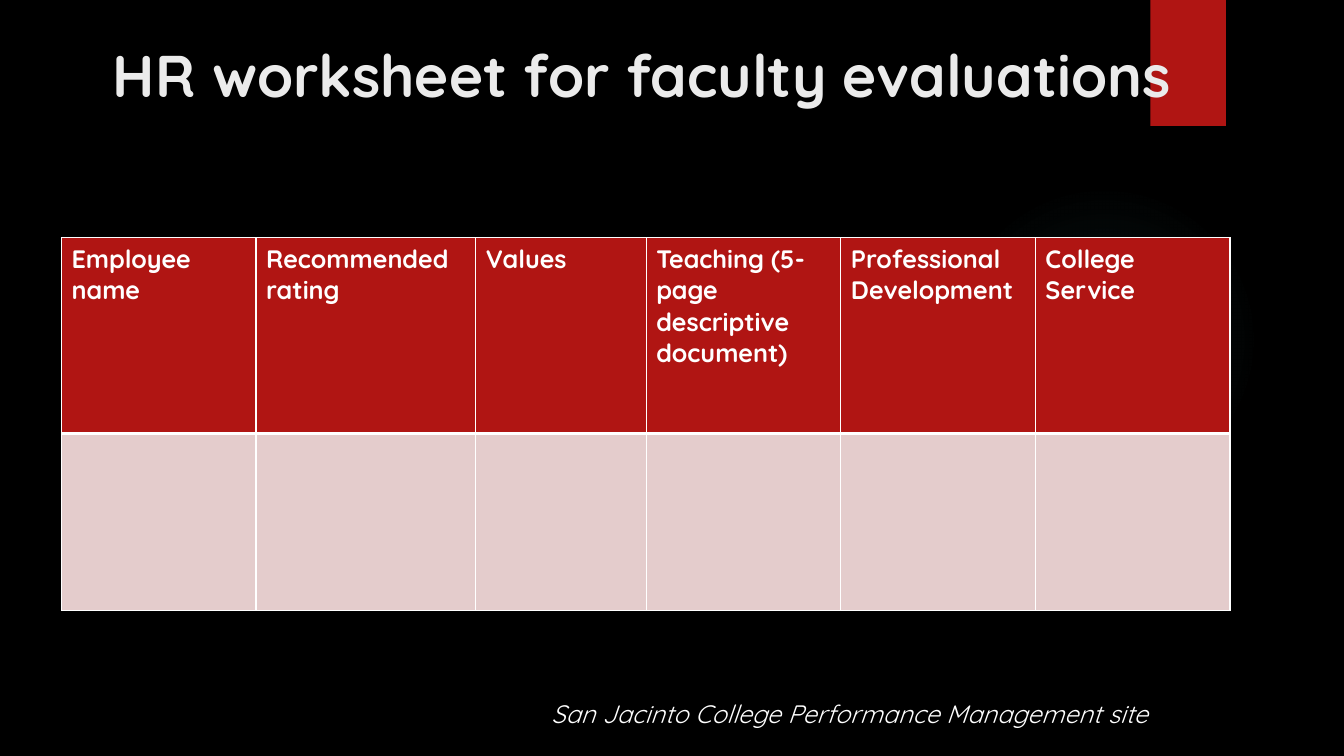
"""Build the faculty evaluation worksheet slide."""
from lxml import etree
from pptx import Presentation, util as u
from pptx.dml.color import RGBColor
from pptx.enum import shapes, text
from pptx.oxml import parse_xml
from pptx.oxml.ns import nsdecls

COLORS = {"black": "000000", "red": "B01513", "pink": "E4CCCC",
          "white": "FFFFFF", "title": "EBEBEB", "glow": "50B9C1"}
FONT = "Quicksand"
HEADERS = ["Employee name", "Recommended rating", "Values",
           "Teaching (5-page descriptive document)",
           "Professional Development", "College Service"]
COLUMN_WIDTHS = [1.93, 2.18, 1.69, 1.93, 1.93, 1.93]
ROW_HEIGHTS = [1.94, 1.76]
GLOW_STOPS = [(0, 7), (36, 6), (69, 0)]


def style(paragraph, size, color, bold=False, italic=False):
    font = paragraph.font
    font.name, font.size = FONT, u.Pt(size)
    font.bold, font.italic = bold, italic
    font.color.rgb = RGBColor.from_string(COLORS[color])


def add_borders(cell, bottom_width):
    properties = cell._tc.get_or_add_tcPr()
    widths = {"lnL": 1, "lnR": 1, "lnT": 1, "lnB": bottom_width}
    for position, (tag, width) in enumerate(widths.items()):
        properties.insert(position, parse_xml(
            f'<a:{tag} {nsdecls("a")} w="{u.Pt(width)}"><a:solidFill>'
            f'<a:srgbClr val="{COLORS["white"]}"/></a:solidFill></a:{tag}>'))


deck = Presentation()
deck.slide_width, deck.slide_height = u.Inches(13.33), u.Inches(7.5)
page = deck.slides.add_slide(deck.slide_layouts[5])
page.background.fill.solid()
page.background.fill.fore_color.rgb = RGBColor.from_string(COLORS["black"])

glow = page.shapes.add_shape(shapes.MSO_SHAPE.OVAL, u.Inches(9.41), u.Inches(1.83),
                             u.Inches(3.08), u.Inches(3.08))
glow.shadow.inherit = False
glow.line.fill.background()
glow.fill.gradient()
gradient = glow.fill._xPr.gradFill
stops = "".join(
    f'<a:gs pos="{position * 1000}"><a:srgbClr val="{COLORS["glow"]}">'
    f'<a:alpha val="{alpha * 1000}"/></a:srgbClr></a:gs>'
    for position, alpha in GLOW_STOPS)
gradient.getparent().replace(gradient, parse_xml(
    f'<a:gradFill {nsdecls("a")}><a:gsLst>{stops}</a:gsLst><a:path path="circle">'
    '<a:fillToRect l="50000" t="50000" r="50000" b="50000"/></a:path></a:gradFill>'))

ribbon = page.shapes.add_shape(shapes.MSO_SHAPE.RECTANGLE, u.Inches(11.41), 0,
                               u.Inches(0.75), u.Inches(1.25))
ribbon.shadow.inherit = False
ribbon.line.fill.background()
ribbon.fill.solid()
ribbon.fill.fore_color.rgb = RGBColor.from_string(COLORS["red"])

frame = page.shapes.add_table(len(ROW_HEIGHTS), len(HEADERS), u.Inches(0.61), u.Inches(2.36),
                              u.Inches(sum(COLUMN_WIDTHS)), u.Inches(sum(ROW_HEIGHTS)))
worksheet = frame.table
for column, width in zip(worksheet.columns, COLUMN_WIDTHS):
    column.width = u.Inches(width)
for row, height in zip(worksheet.rows, ROW_HEIGHTS):
    row.height = u.Inches(height)
for index, header in enumerate(HEADERS):
    for row, (color, bottom_width) in enumerate([("red", 3), ("pink", 1)]):
        cell = worksheet.cell(row, index)
        cell.fill.solid()
        cell.fill.fore_color.rgb = RGBColor.from_string(COLORS[color])
        add_borders(cell, bottom_width)
    heading = worksheet.cell(0, index).text_frame
    heading.text = header
    style(heading.paragraphs[0], 18, "white", bold=True)

title = page.shapes.title
title.left, title.top = u.Inches(0.72), u.Inches(0.33)
title.width, title.height = u.Inches(11.18), u.Inches(1.53)
heading = title.text_frame
heading.text = "HR worksheet for faculty evaluations"
heading.auto_size = text.MSO_AUTO_SIZE.NONE
heading.vertical_anchor = text.MSO_ANCHOR.TOP
heading.margin_left = u.Inches(0.4)
heading.paragraphs[0].alignment = text.PP_ALIGN.LEFT
style(heading.paragraphs[0], 42, "title", bold=True)
page.shapes._spTree.append(title._element)

box = page.shapes.add_textbox(u.Inches(5.37), u.Inches(6.88), u.Inches(6.75), u.Inches(0.4))
box.text_frame.word_wrap = True
box.text_frame.text = "San Jacinto College Performance Management site"
style(box.text_frame.paragraphs[0], 18, "white", italic=True)

deck.save("out.pptx")
